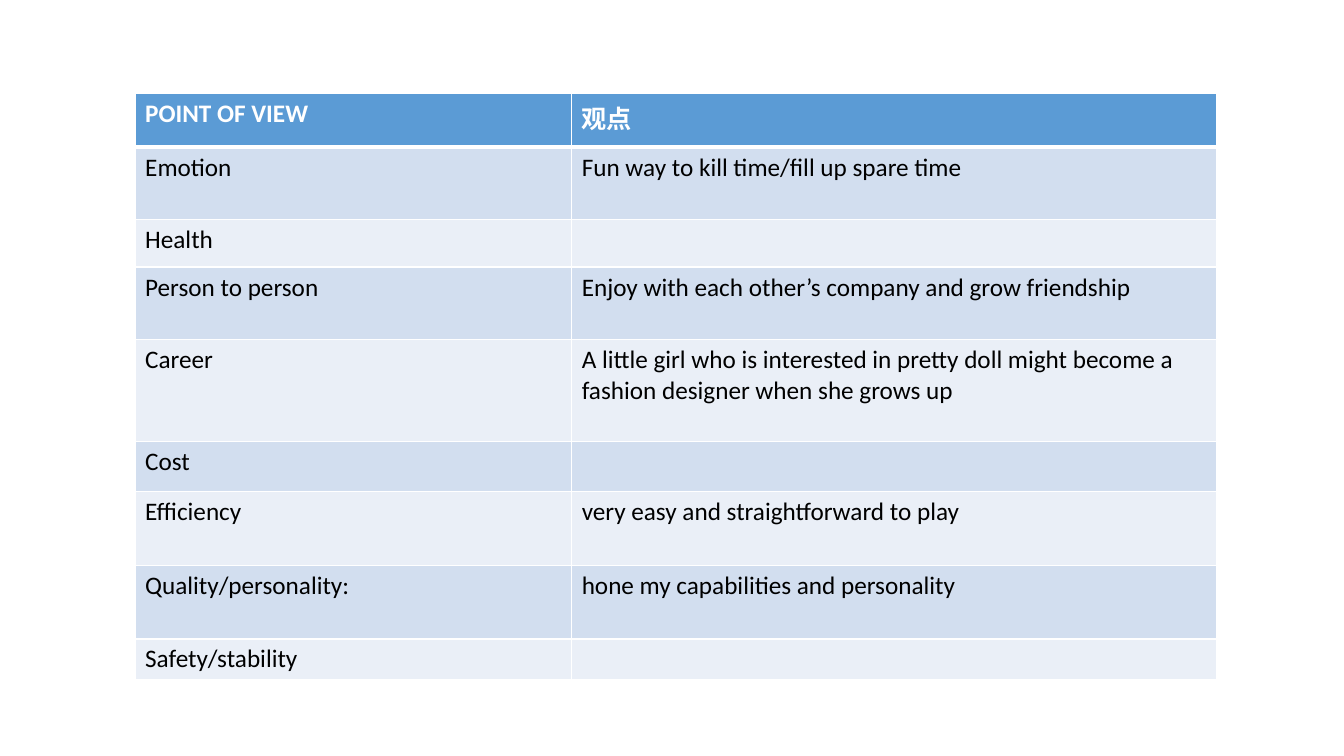
from dataclasses import dataclass

from lxml import etree
from pptx import Presentation
from pptx.dml.color import RGBColor
from pptx.oxml import ns
from pptx.table import _Cell
from pptx.util import Inches, Pt


@dataclass(frozen=True)
class Theme:
    font: str = "Calibri"
    size: int = 18
    header_fill: str = "5B9BD5"
    bands: tuple[str, str] = ("D2DEEF", "EAEFF7")
    header_ink: str = "FFFFFF"
    body_ink: str = "000000"
    rule: str = "FFFFFF"
    thin: int = 1
    thick: int = 3


@dataclass(frozen=True)
class Viewpoint:
    aspect: str
    opinion: str
    height: float


THEME = Theme()
COLUMN_WIDTHS = (4.33, 6.4)
VIEWPOINTS = (
    Viewpoint("POINT OF VIEW", "观点", 0.53),
    Viewpoint("Emotion", "Fun way to kill time/fill up spare time", 0.72),
    Viewpoint("Health", "", 0.47),
    Viewpoint("Person to person", "Enjoy with each other’s company and grow friendship", 0.72),
    Viewpoint(
        "Career",
        "A little girl who is interested in pretty doll might become a "
        "fashion designer when she grows up",
        1.01,
    ),
    Viewpoint("Cost", "", 0.5),
    Viewpoint("Efficiency", "very easy and straightforward to play", 0.73),
    Viewpoint("Quality/personality:", "hone my capabilities and personality", 0.73),
    Viewpoint("Safety/stability", "", 0.4),
)


def add_border(cell: _Cell, side: str, width: int) -> None:
    line = etree.SubElement(
        cell._tc.get_or_add_tcPr(), ns.qn(f"a:ln{side}"), w=str(Pt(width))
    )
    fill = etree.SubElement(line, ns.qn("a:solidFill"))
    etree.SubElement(fill, ns.qn("a:srgbClr"), val=THEME.rule)


def fill_cell(cell: _Cell, wording: str, row: int) -> None:
    """Style one cell; row 0 is the header and the others alternate in colour."""
    is_header = row == 0
    widths = {
        "L": THEME.thin,
        "R": THEME.thin,
        "T": THEME.thick if row == 1 else THEME.thin,
        "B": THEME.thick if is_header else THEME.thin,
    }
    for side, width in widths.items():
        add_border(cell, side, width)
    cell.fill.solid()
    cell.fill.fore_color.rgb = RGBColor.from_string(
        THEME.header_fill if is_header else THEME.bands[(row - 1) % 2]
    )
    paragraph = cell.text_frame.paragraphs[0]
    if not wording:
        paragraph.font.size = Pt(THEME.size)
        return
    run = paragraph.add_run()
    run.text = wording
    run.font.name = THEME.font
    run.font.size = Pt(THEME.size)
    run.font.bold = is_header
    run.font.color.rgb = RGBColor.from_string(
        THEME.header_ink if is_header else THEME.body_ink
    )


def main() -> None:
    deck = Presentation()
    deck.slide_width, deck.slide_height = Inches(13.33), Inches(7.5)
    slide = deck.slides.add_slide(deck.slide_layouts[6])
    viewpoints = slide.shapes.add_table(
        len(VIEWPOINTS),
        len(COLUMN_WIDTHS),
        Inches(1.34),
        Inches(0.93),
        Inches(sum(COLUMN_WIDTHS)),
        Inches(sum(viewpoint.height for viewpoint in VIEWPOINTS)),
    ).table
    for column, width in zip(viewpoints.columns, COLUMN_WIDTHS):
        column.width = Inches(width)
    for row, viewpoint in enumerate(VIEWPOINTS):
        viewpoints.rows[row].height = Inches(viewpoint.height)
        for column, wording in enumerate((viewpoint.aspect, viewpoint.opinion)):
            fill_cell(viewpoints.cell(row, column), wording, row)
    deck.save("out.pptx")


if __name__ == "__main__":
    main()
